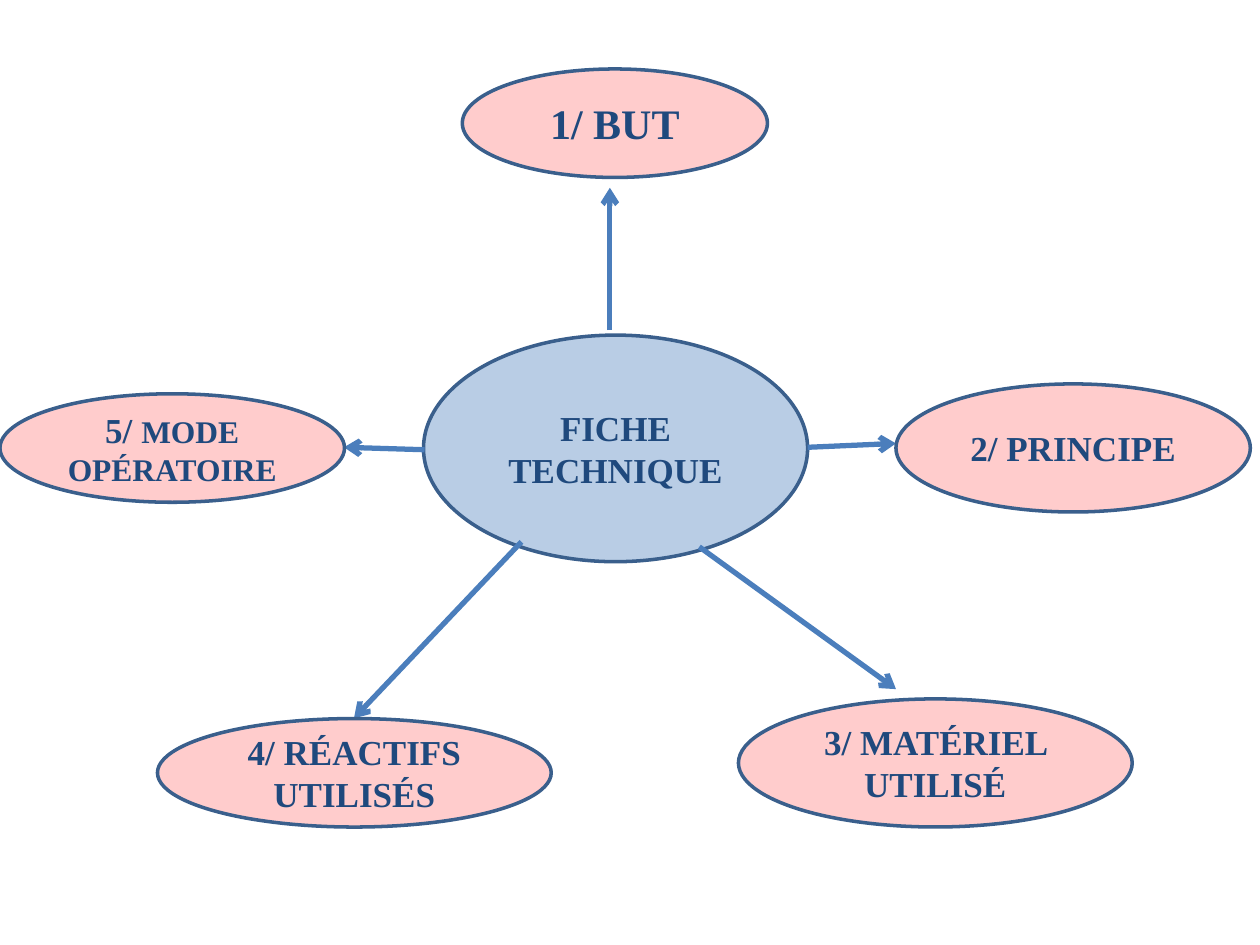
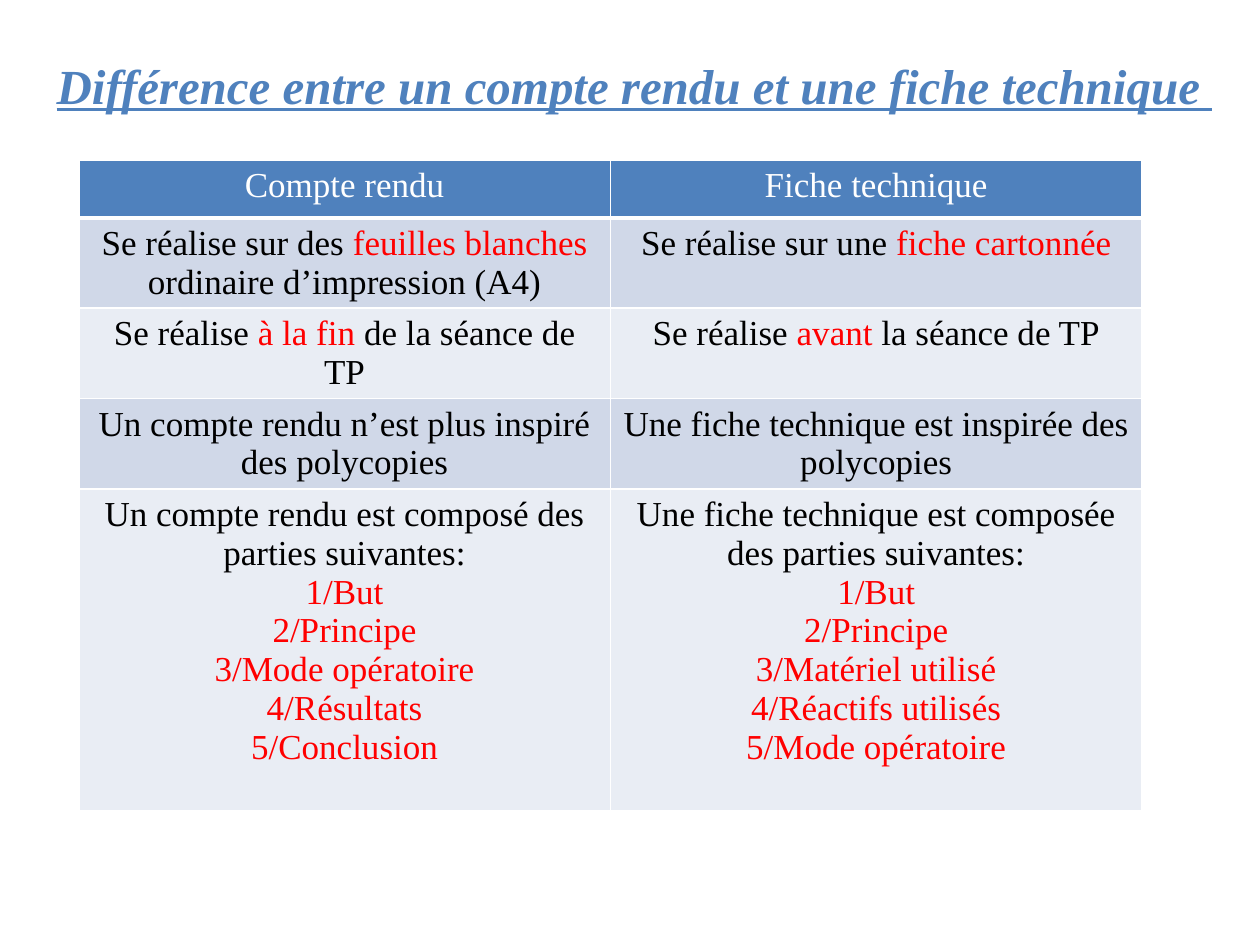
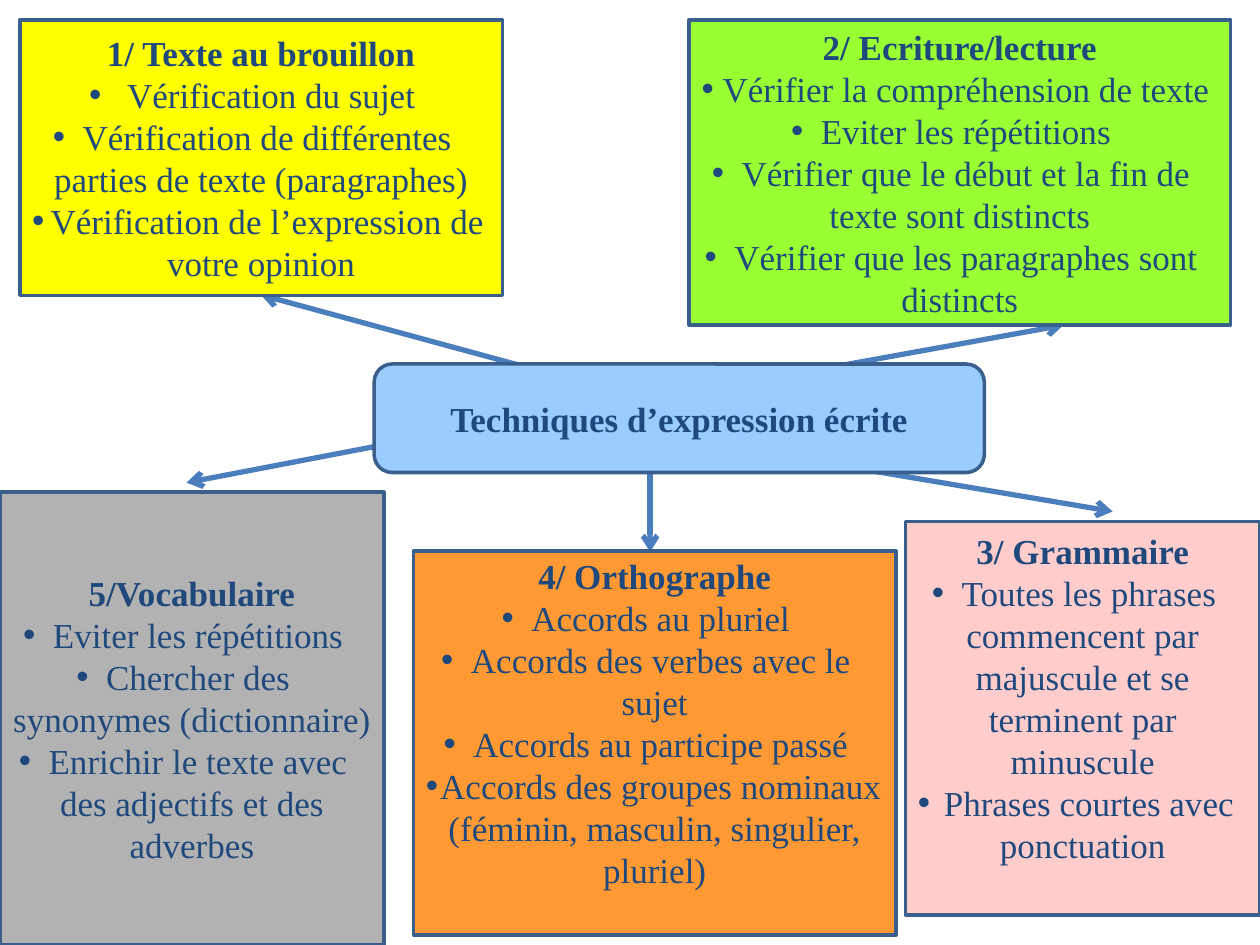
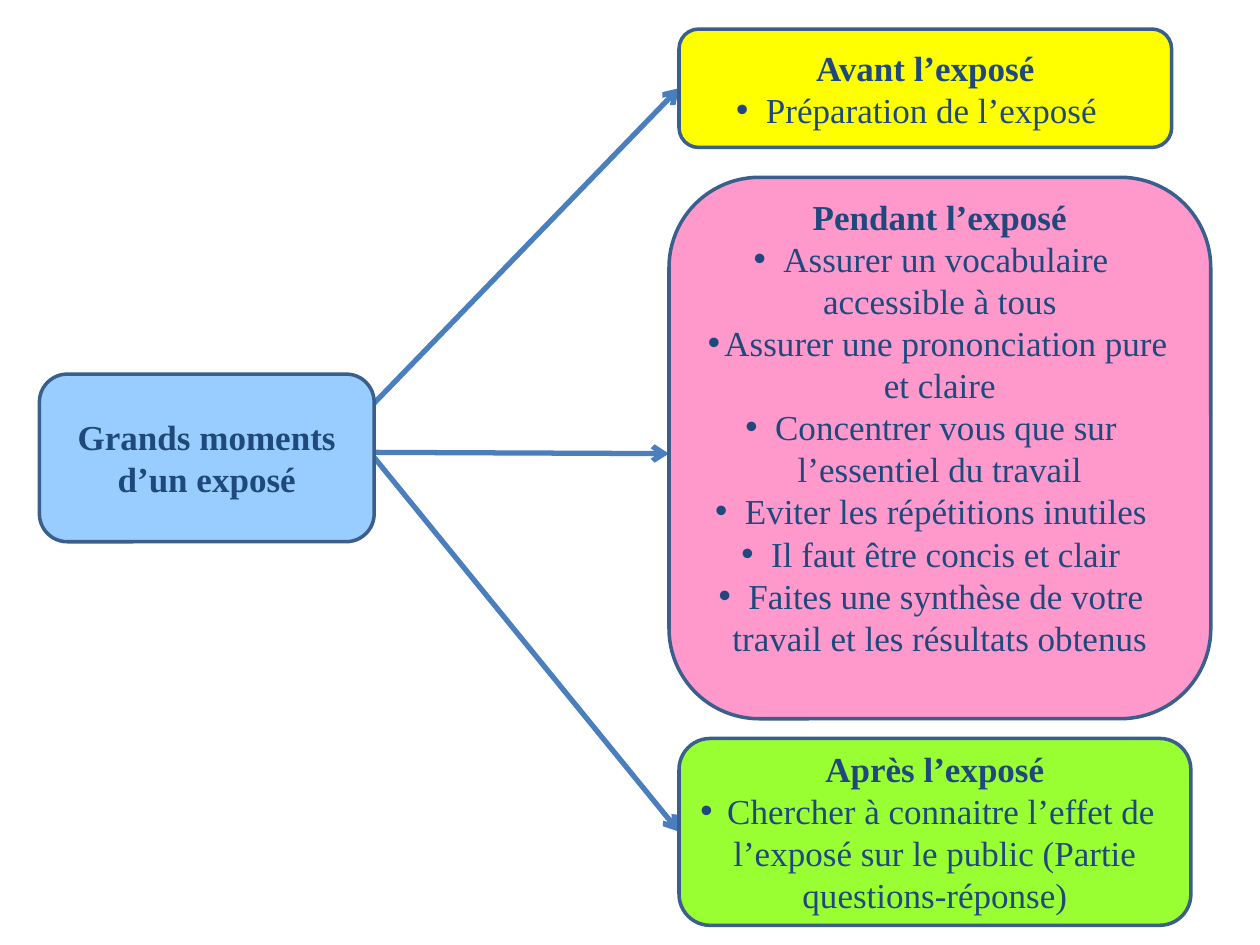
from lxml.etree import SubElement
from pptx import Presentation
from pptx.dml.color import RGBColor
from pptx.enum.shapes import MSO_CONNECTOR, MSO_SHAPE as Preset
from pptx.enum.text import MSO_ANCHOR, MSO_AUTO_SIZE, PP_ALIGN
from pptx.oxml.ns import qn
from pptx.util import Pt

# Shared look
FONT = "Times New Roman"
NAVY, OUTLINE, ARROW, ACCENT = "1F497D", "3A5F8C", "4B7EBC", "4F81BD"
PINK, SKY, YELLOW, LIME = "FFCCCC", "99CCFF", "FFFF00", "99FF33"
WHITE, BLACK, RED = "FFFFFF", "000000", "FF0000"
BANDS = ("D0D8E8", "E9EDF4")


def color(value):
    return RGBColor.from_string(value)


def fill(target, value):
    target.fill.solid()
    target.fill.fore_color.rgb = color(value)


def style(span, size=20, ink=NAVY, bold=False):
    span.font.name = FONT
    span.font.size = Pt(size)
    span.font.bold = bold
    span.font.color.rgb = color(ink)


def add_bullet(para):
    properties = para._p.get_or_add_pPr()
    SubElement(properties, qn("a:buFont"), typeface="Arial")
    SubElement(properties, qn("a:buChar"), char="•")


# Elements
def add_box(page, preset, place, fill_color, title, points=(), size=20, lift=0):
    """Outlined shape with a bold title and bullets; lift raises the text."""
    box = page.shapes.add_shape(preset, *map(Pt, place))
    box.shadow.inherit = False
    fill(box, fill_color)
    box.line.color.rgb = color(OUTLINE)
    box.line.width = Pt(2)
    frame = box.text_frame
    frame.word_wrap = True
    frame.vertical_anchor = MSO_ANCHOR.MIDDLE
    frame.margin_bottom = Pt(3.6 + lift)
    frame.text = "\n".join([title, *points])
    for index, para in enumerate(frame.paragraphs):
        para.alignment = PP_ALIGN.CENTER
        if index:
            add_bullet(para)
        for span in para.runs:
            style(span, size, bold=index == 0)
    return box


def add_arrow(page, *ends):
    arrow = page.shapes.add_connector(MSO_CONNECTOR.STRAIGHT, *map(Pt, ends))
    arrow.line.color.rgb = color(ARROW)
    arrow.line.width = Pt(3)
    SubElement(arrow.line._get_or_add_ln(), qn("a:tailEnd"), type="arrow")
    SubElement(arrow._element.spPr, qn("a:effectLst"))


def add_title(page, text):
    box = page.shapes.add_textbox(Pt(22.3), Pt(28), Pt(680.5), Pt(41))
    frame = box.text_frame
    frame.word_wrap = True
    frame.auto_size = MSO_AUTO_SIZE.SHAPE_TO_FIT_TEXT
    frame.text = text
    para = frame.paragraphs[0]
    para.alignment = PP_ALIGN.CENTER
    span = para.runs[0]
    style(span, 28, ACCENT, bold=True)
    span.font.italic = span.font.underline = True


def add_borders(cell, bottom):
    properties = cell._tc.get_or_add_tcPr()
    for side, width in (("L", 1), ("R", 1), ("T", 1), ("B", bottom)):
        line = SubElement(properties, qn(f"a:ln{side}"), w=str(Pt(width)))
        paint = SubElement(line, qn("a:solidFill"))
        SubElement(paint, qn("a:srgbClr"), val=WHITE)


def fill_cell(cell, text, ground, ink):
    """Write one cell; the parts between bars are red."""
    add_borders(cell, 3 if ink == WHITE else 1)
    fill(cell, ground)
    cell.text = "\n".join("" for _ in text.split("\n"))
    for para, line in zip(cell.text_frame.paragraphs, text.split("\n")):
        para.alignment = PP_ALIGN.CENTER
        for index, part in enumerate(line.split("|")):
            if part:
                span = para.add_run()
                span.text = part
                style(span, ink=RED if index % 2 else ink)


def add_comparison(page, rows, heights):
    frame = page.shapes.add_table(len(rows), 2, Pt(45), Pt(91.5), Pt(607.6), Pt(sum(heights)))
    table = frame.table
    for index, (row, height) in enumerate(zip(rows, heights)):
        table.rows[index].height = Pt(height)
        header = index == 0
        ground = ACCENT if header else BANDS[(index - 1) % 2]
        for column, text in enumerate(row):
            fill_cell(table.cell(index, column), text, ground, WHITE if header else BLACK)


# Slides
def build_sheet_map(page):
    add_box(page, Preset.OVAL, (242, 191.5, 219.5, 129.5), "B9CDE5", "FICHE TECHNIQUE")
    for ends in (
        (461.5, 255.6, 512, 253.4),
        (242.6, 257, 196.6, 255.6),
        (399.6, 312.5, 512, 393.8),
        (298, 309.6, 202.3, 410.4),
        (348.5, 188.6, 348.5, 107.3),
    ):
        add_arrow(page, *ends)
    for title, place, size in (
        ("1/ BUT", (264.2, 39.4, 174.4, 62), 24),
        ("2/ PRINCIPE", (512, 219.4, 202.5, 73.2), 20),
        ("3/ MATÉRIEL UTILISÉ", (422, 399.4, 225, 73.2), 20),
        ("4/ RÉACTIFS UTILISÉS", (90, 410.6, 225, 62), 20),
    ):
        add_box(page, Preset.OVAL, place, PINK, title, size=size)
    mode = add_box(page, Preset.OVAL, (0, 225, 196.9, 62), PINK, "5/ ")
    span = mode.text_frame.paragraphs[0].add_run()
    span.text = "MODE OPÉRATOIRE"
    style(span, 18, bold=True)


def build_differences(page):
    add_comparison(page, (
        ("Compte rendu", "Fiche technique"),
        ("Se réalise sur des |feuilles blanches |ordinaire d’impression (A4)",
         "Se réalise sur une |fiche cartonnée|"),
        ("Se réalise |à la fin |de la séance de TP",
         "Se réalise |avant| la séance de TP"),
        ("Un compte rendu n’est plus inspiré des polycopies",
         "Une fiche technique est inspirée des polycopies"),
        ("Un compte rendu est composé des parties suivantes:\n|1/But|\n|2/Principe|\n"
         "|3/Mode opératoire|\n|4/Résultats|\n|5/Conclusion|",
         "Une fiche technique est composée des parties suivantes:\n|1/But|\n|2/Principe|\n"
         "|3/Matériel utilisé|\n|4/Réactifs utilisés|\n|5/Mode opératoire|"),
    ), (33, 51, 51, 51, 184))
    add_title(page, "Différence entre un compte rendu et une fiche technique ")


def build_writing(page):
    for ends in (
        (393.8, 224.6, 607.7, 185.8),
        (376.6, 230.4, 149, 168.5),
        (343.4, 230.4, 106.6, 275.8),
        (371.5, 258.5, 371.5, 315.4),
        (371.5, 247.7, 635.8, 292.3),
    ):
        add_arrow(page, *ends)
    add_box(page, Preset.ROUNDED_RECTANGLE, (213.8, 208, 348.7, 62), SKY,
            "Techniques d’expression écrite")
    for place, ground, lift, title, points in (
        ((11.3, 11.3, 275.8, 157.5), YELLOW, 0, "1/ Texte au brouillon",
         (" Vérification du sujet",
          "Vérification de différentes parties de texte (paragraphes)",
          "Vérification de l’expression de votre opinion")),
        ((393.8, 11.3, 309.4, 174.4), LIME, 0, "2/ Ecriture/lecture",
         ("Vérifier la compréhension de texte",
          "Eviter les répétitions",
          "Vérifier que le début et la fin de texte sont distincts",
          "Vérifier que les paragraphes sont distincts")),
        ((517.5, 298, 202.5, 225), PINK, 24, "3/ Grammaire",
         ("Toutes les phrases commencent par majuscule et se terminent par minuscule",
          "Phrases courtes avec ponctuation")),
        ((236.3, 315, 275.6, 219.4), "FF9933", 24, "4/ Orthographe",
         ("Accords au pluriel",
          "Accords des verbes avec le sujet",
          "Accords au participe passé",
          "Accords des groupes nominaux (féminin, masculin, singulier, pluriel)")),
        ((0, 281.3, 219.4, 258.7), "B2B2B2", 0, "5/Vocabulaire",
         ("Eviter les répétitions",
          "Chercher des synonymes (dictionnaire)",
          "Enrichir le texte avec des adjectifs et des adverbes")),
    ):
        add_box(page, Preset.RECTANGLE, place, ground, title, points, lift=lift)


def build_talk(page):
    for ends in (
        (213.8, 230.4, 388, 50.4),
        (213.8, 258.5, 382.3, 259.2),
        (213.8, 261.4, 388, 475.2),
    ):
        add_arrow(page, *ends)
    for place, ground, lift, title, points in (
        ((22.5, 213.8, 191.3, 95.8), SKY, 0, "Grands moments d’un exposé", ()),
        ((388, 16.6, 281.5, 67.7), YELLOW, 0, "Avant l’exposé",
         ("Préparation de l’exposé",)),
        ((382.3, 101.3, 309.6, 309.4), "FF99CC", 24, "Pendant l’exposé",
         ("Assurer un vocabulaire accessible à tous",
          "Assurer une prononciation pure et claire",
          "Concentrer vous que sur l’essentiel du travail",
          "Eviter les répétitions inutiles",
          "Il faut être concis et clair",
          "Faites une synthèse de votre travail et les résultats obtenus")),
        ((388, 422, 292.5, 106.8), LIME, 0, "Après l’exposé",
         ("Chercher à connaitre l’effet de l’exposé sur le public "
          "(Partie questions-réponse)",)),
    ):
        add_box(page, Preset.ROUNDED_RECTANGLE, place, ground, title, points, lift=lift)


def main():
    deck = Presentation()
    deck.slide_width, deck.slide_height = Pt(720), Pt(540)
    for build in (build_sheet_map, build_differences, build_writing, build_talk):
        build(deck.slides.add_slide(deck.slide_layouts[6]))
    deck.save("out.pptx")


if __name__ == "__main__":
    main()
